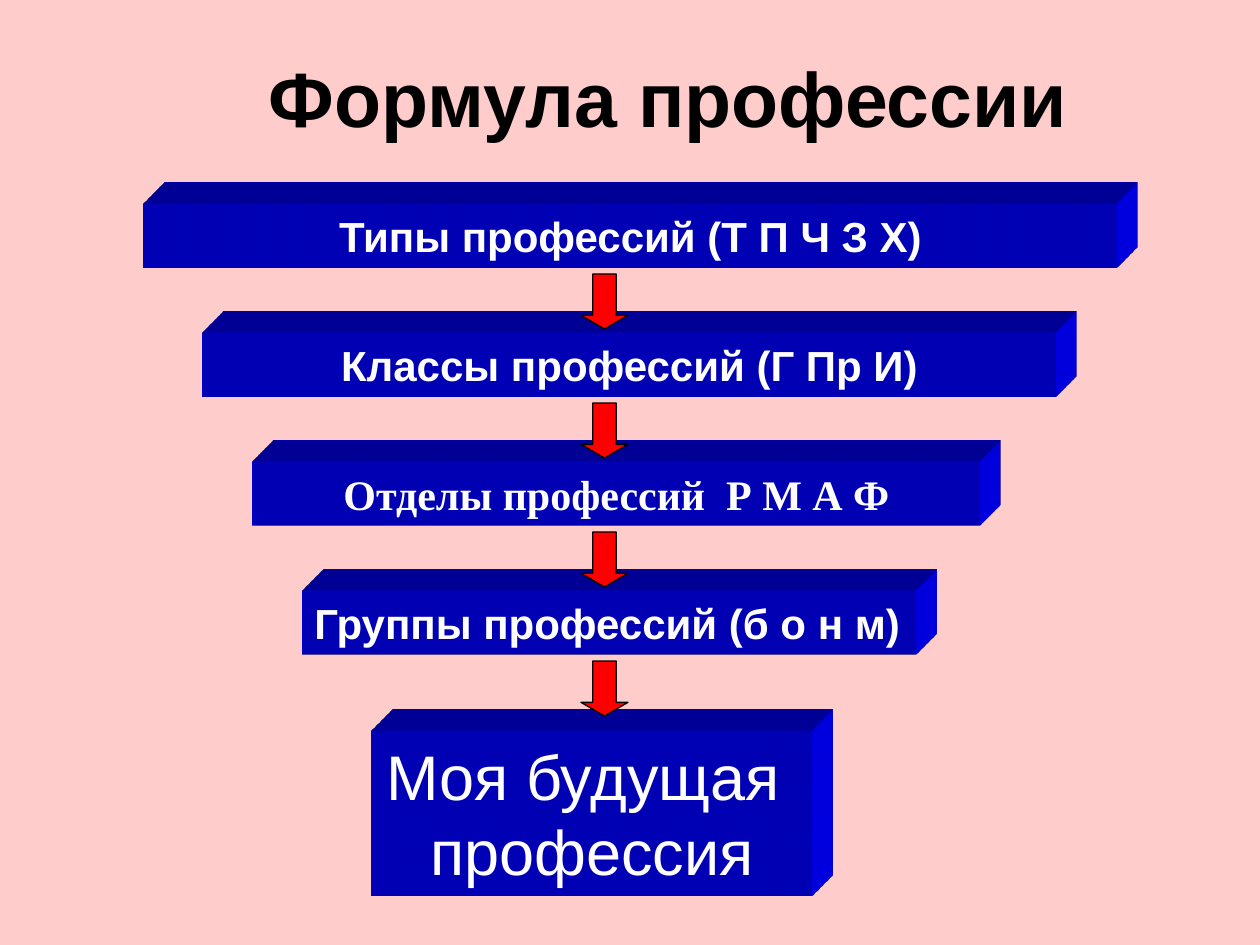
import pptx
import pptx.dml.color
import pptx.enum.shapes
import pptx.enum.text
import pptx.oxml
import pptx.util

SCALE = 914400 / 126
ALIGN = pptx.enum.text.PP_ALIGN
ANCHOR = pptx.enum.text.MSO_ANCHOR
SHAPES = pptx.enum.shapes.MSO_SHAPE
NAMESPACE = "http://schemas.openxmlformats.org/drawingml/2006/main"
EXTRUSION = (
    f'<a:scene3d xmlns:a="{NAMESPACE}"><a:camera prst="legacyObliqueTopRight"/>'
    '<a:lightRig rig="legacyFlat3" dir="b"/></a:scene3d>',
    f'<a:sp3d xmlns:a="{NAMESPACE}" extrusionH="430200" prstMaterial="legacyMatte">'
    '<a:extrusionClr><a:srgbClr val="0000FF"/></a:extrusionClr></a:sp3d>',
)
FIRST_TOP, FIRST_ARROW_TOP, PITCH = 204, 274, 129
HEADING = {"size": 24, "bold": True, "name": "Arial"}
LEVELS = [
    (144, 973, "Типы профессий (Т П Ч З Х)", {}, ALIGN.CENTER, True),
    (203, 853, "Классы профессий (Г Пр И)", {}, ALIGN.CENTER, True),
    (253, 727, "Отделы профессий  Р М А Ф", {"name": "Times New Roman"}, ALIGN.CENTER, True),
    (302, 614, "Группы профессий (б о н м)", {}, ALIGN.LEFT, False),
]


def px(length):
    """Turn pixels into EMU."""
    return pptx.util.Emu(round(length * SCALE))


def colour(value):
    """Turn a hex string into a colour."""
    return pptx.dml.color.RGBColor.from_string(value)


class FormulaSlide:
    """Hold the style and the current slide."""

    def __init__(self, deck):
        """Add a page with a plain background."""
        self.page = deck.slides.add_slide(deck.slide_layouts[5])
        background = self.page.background.fill
        background.solid()
        background.fore_color.rgb = colour("FFCCCC")

    def set_text(self, box, lines, ink, style, align, frame_format):
        """Fill a box with formatted paragraphs."""
        frame = box.text_frame
        for key, value in frame_format.items():
            setattr(frame, key, value)
        for index, line in enumerate(lines):
            para = frame.add_paragraph() if index else frame.paragraphs[0]
            para.alignment = align
            span = para.add_run()
            span.text = line
            span.font.color.rgb = colour(ink)
            for key, value in style.items():
                setattr(span.font, key, pptx.util.Pt(value) if key == "size" else value)

    def title(self, text, left, top, width, height):
        """Place the title placeholder."""
        box = self.page.shapes.title
        for key, value in {"left": left, "top": top, "width": width, "height": height}.items():
            setattr(box, key, px(value))
        self.set_text(box, [text], "000000", {"size": 44, "bold": True, "name": "Arial"},
                      ALIGN.CENTER, {"vertical_anchor": ANCHOR.MIDDLE})

    def shape(self, kind, fill, left, top, width, height):
        """Add a filled shape without a shadow."""
        shape = self.page.shapes.add_shape(kind, px(left), px(top), px(width), px(height))
        shape.fill.solid()
        shape.fill.fore_color.rgb = colour(fill)
        shape.shadow.inherit = False
        return shape

    def block(self, lines, left, top, width, height, style, align=ALIGN.CENTER, wrap=True):
        """Add an extruded block with text."""
        box = self.shape(SHAPES.RECTANGLE, "0000FF", left, top, width, height)
        box.line.fill.background()
        for part in EXTRUSION:
            box._element.spPr.append(pptx.oxml.parse_xml(part))
        self.set_text(box, lines, "FFFFFF", style, align, {
            "word_wrap": wrap, "vertical_anchor": ANCHOR.TOP,
            "auto_size": pptx.enum.text.MSO_AUTO_SIZE.SHAPE_TO_FIT_TEXT})

    def arrow(self, left, top, width, height):
        """Add a red arrow that points down."""
        arrow = self.shape(SHAPES.DOWN_ARROW, "FF0000", left, top, width, height)
        arrow.adjustments[0], arrow.adjustments[1] = 0.5, 0.29
        arrow.line.color.rgb = colour("000000")
        arrow.line.width = pptx.util.Pt(0.75)


def main():
    """Build and save the deck."""
    deck = pptx.Presentation()
    deck.slide_width, deck.slide_height = px(1260), px(945)
    slide = FormulaSlide(deck)
    slide.title("Формула профессии", 203, 38, 931, 117)
    for row, (left, width, text, style, align, wrap) in enumerate(LEVELS):
        slide.block([text], left, FIRST_TOP + row * PITCH, width, 64,
                    {**HEADING, **style}, align, wrap)
    slide.block(["Моя будущая ", "профессия"], 372, 731, 440, 165,
                {"size": 36, "name": "Arial"}, wrap=False)
    for row in range(len(LEVELS)):
        slide.arrow(581, FIRST_ARROW_TOP + row * PITCH, 47, 55)
    deck.save("out.pptx")


if __name__ == "__main__":
    main()
